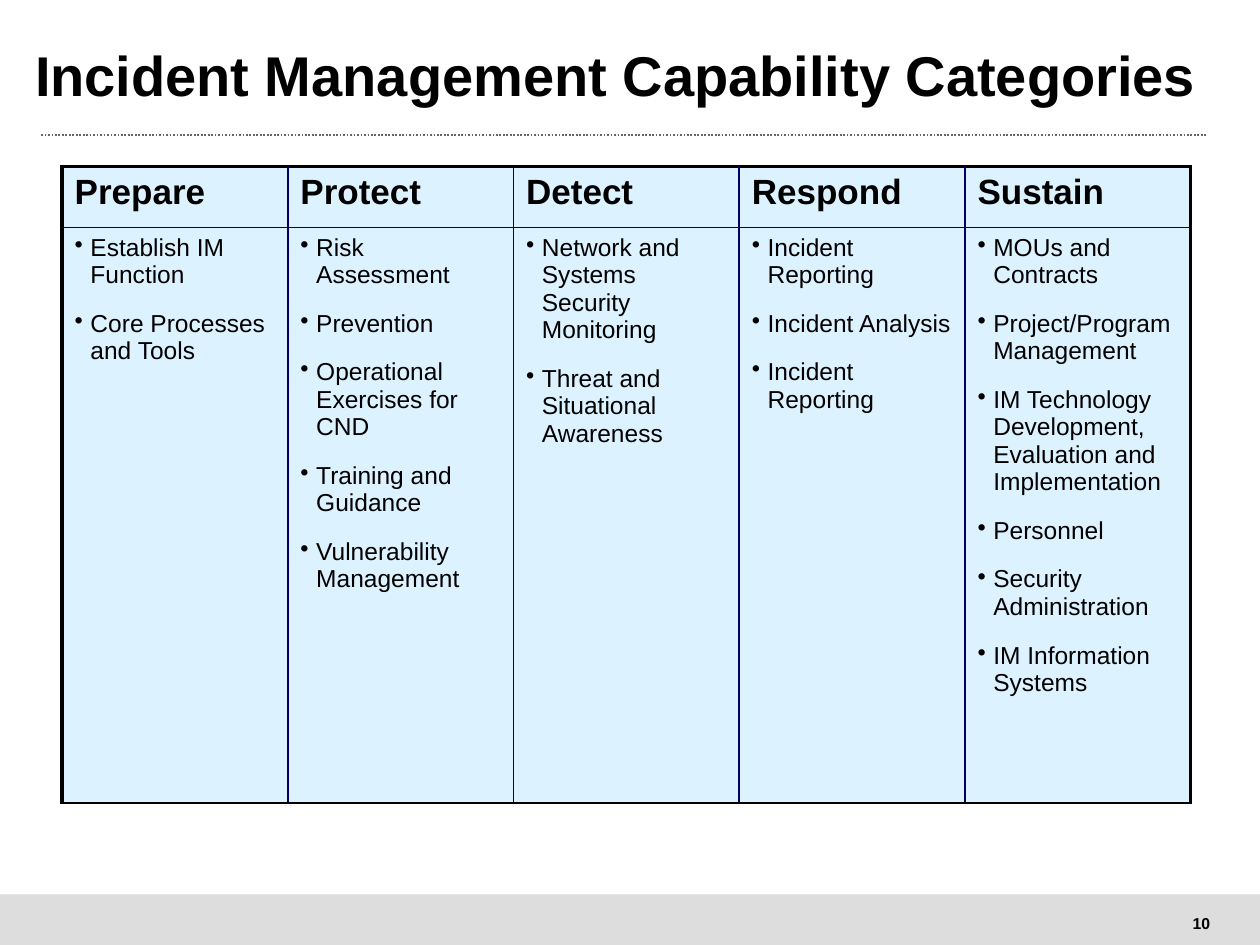
from lxml import etree
from pptx import Presentation
from pptx.dml.color import RGBColor
from pptx.enum.dml import MSO_LINE
from pptx.enum.shapes import MSO_CONNECTOR, MSO_SHAPE
from pptx.enum.text import MSO_ANCHOR, MSO_AUTO_SIZE, PP_ALIGN
from pptx.oxml.ns import qn
from pptx.util import Pt

COLORS = {"text": "000000", "cell": "DDF2FF", "grid": "000063",
          "frame": "000000", "footer": "DDDDDD", "rule": "666666"}
CATEGORIES = {
    "Prepare": ["Establish IM Function", "Core Processes and Tools"],
    "Protect": ["Risk Assessment", "Prevention", "Operational Exercises for CND",
                "Training and Guidance", "Vulnerability Management"],
    "Detect": ["Network and Systems Security Monitoring",
               "Threat and\nSituational Awareness"],
    "Respond": ["Incident Reporting", "Incident Analysis", "Incident Reporting"],
    "Sustain": ["MOUs and Contracts", "Project/Program Management",
                "IM Technology Development, Evaluation and Implementation",
                "Personnel", "Security Administration", "IM Information Systems"],
}


def rgb(name):
    return RGBColor.from_string(COLORS[name])


class SlideBuilder:
    font = "Arial"

    def __init__(self, slide):
        self.slide = slide

    def style(self, p, size, bold=True):
        for r in p.runs:
            r.font.name, r.font.size, r.font.bold = self.font, Pt(size), bold
            r.font.color.rgb = rgb("text")

    def title(self, text, x, y, w, h):
        s = self.slide.shapes.title
        s.left, s.top, s.width, s.height = Pt(x), Pt(y), Pt(w), Pt(h)
        tf = s.text_frame
        tf.text = text
        tf.auto_size = MSO_AUTO_SIZE.NONE
        tf.vertical_anchor = MSO_ANCHOR.MIDDLE
        tf.margin_left = tf.margin_right = tf.margin_top = tf.margin_bottom = 0
        p = tf.paragraphs[0]
        p.alignment, p.line_spacing = PP_ALIGN.LEFT, 0.8
        self.style(p, 32)

    def band(self, x, y, w, h, color):
        s = self.slide.shapes.add_shape(MSO_SHAPE.RECTANGLE, Pt(x), Pt(y), Pt(w), Pt(h))
        s.shadow.inherit = False
        s.fill.solid()
        s.fill.fore_color.rgb = rgb(color)
        s.line.fill.background()

    def dotted_rule(self, x1, x2, y):
        s = self.slide.shapes.add_connector(
            MSO_CONNECTOR.STRAIGHT, Pt(x1), Pt(y), Pt(x2), Pt(y))
        s.line.color.rgb = rgb("rule")
        s.line.width = Pt(1)
        s.line.dash_style = MSO_LINE.ROUND_DOT
        etree.SubElement(s._element.spPr, qn("a:effectLst"))

    def label(self, text, x, y, w, h, size):
        tf = self.slide.shapes.add_textbox(Pt(x), Pt(y), Pt(w), Pt(h)).text_frame
        tf.text = text
        tf.word_wrap = False
        tf.vertical_anchor = MSO_ANCHOR.MIDDLE
        tf.paragraphs[0].alignment = PP_ALIGN.CENTER
        self.style(tf.paragraphs[0], size)

    def bullet(self, p):
        pPr = p._p.get_or_add_pPr()
        pPr.set("marL", str(Pt(9)))
        pPr.set("indent", str(-Pt(9)))
        etree.SubElement(pPr, qn("a:buChar"), char="•")

    def borders(self, cell, **sides):
        tcPr = cell._tc.get_or_add_tcPr()
        for side in "LRTB":
            color, width = sides[side]
            ln = etree.SubElement(tcPr, qn(f"a:ln{side}"), w=str(Pt(width)))
            fill = etree.SubElement(ln, qn("a:solidFill"))
            etree.SubElement(fill, qn("a:srgbClr"), val=COLORS[color])

    def table(self, columns, x, y, col_w, row_heights):
        n = len(columns)
        table = self.slide.shapes.add_table(
            2, n, Pt(x), Pt(y), Pt(col_w * n), Pt(sum(row_heights))).table
        for row, height in zip(table.rows, row_heights):
            row.height = Pt(height)
        grid, frame = ("grid", 1), ("frame", 2.25)
        for c, (heading, items) in enumerate(columns.items()):
            table.columns[c].width = Pt(col_w)
            for r, lines in enumerate(([heading], items)):
                cell = table.cell(r, c)
                self.borders(cell, L=grid if c else frame,
                             R=frame if c == n - 1 else grid,
                             T=grid if r else frame,
                             B=("frame", 1) if r else grid)
                cell.fill.solid()
                cell.fill.fore_color.rgb = rgb("cell")
                self.cell_text(cell.text_frame, lines, is_list=r == 1)

    def cell_text(self, tf, lines, is_list):
        for i, line in enumerate(lines):
            p = tf.add_paragraph() if i else tf.paragraphs[0]
            p.text = line.replace("\n", "\v")
            if is_list:
                self.bullet(p)
                p.space_before, p.space_after = Pt(6 if i else 0), Pt(6)
            self.style(p, 14 if is_list else 20, bold=not is_list)


def main():
    prs = Presentation()
    prs.slide_width, prs.slide_height = Pt(720), Pt(540)
    b = SlideBuilder(prs.slides.add_slide(prs.slide_layouts[5]))

    # Footer and page number
    b.band(0, 511, 720, 29, "footer")
    b.label("10", 674, 518.5, 25, 18, 9)

    # Title and rule
    b.dotted_rule(23.5, 690, 77)
    b.title("Incident Management Capability Categories", 20, 18, 667.5, 56)

    # Capability table
    b.table(CATEGORIES, 35.5, 95, 129, (35, 329))

    prs.save("out.pptx")


if __name__ == "__main__":
    main()
